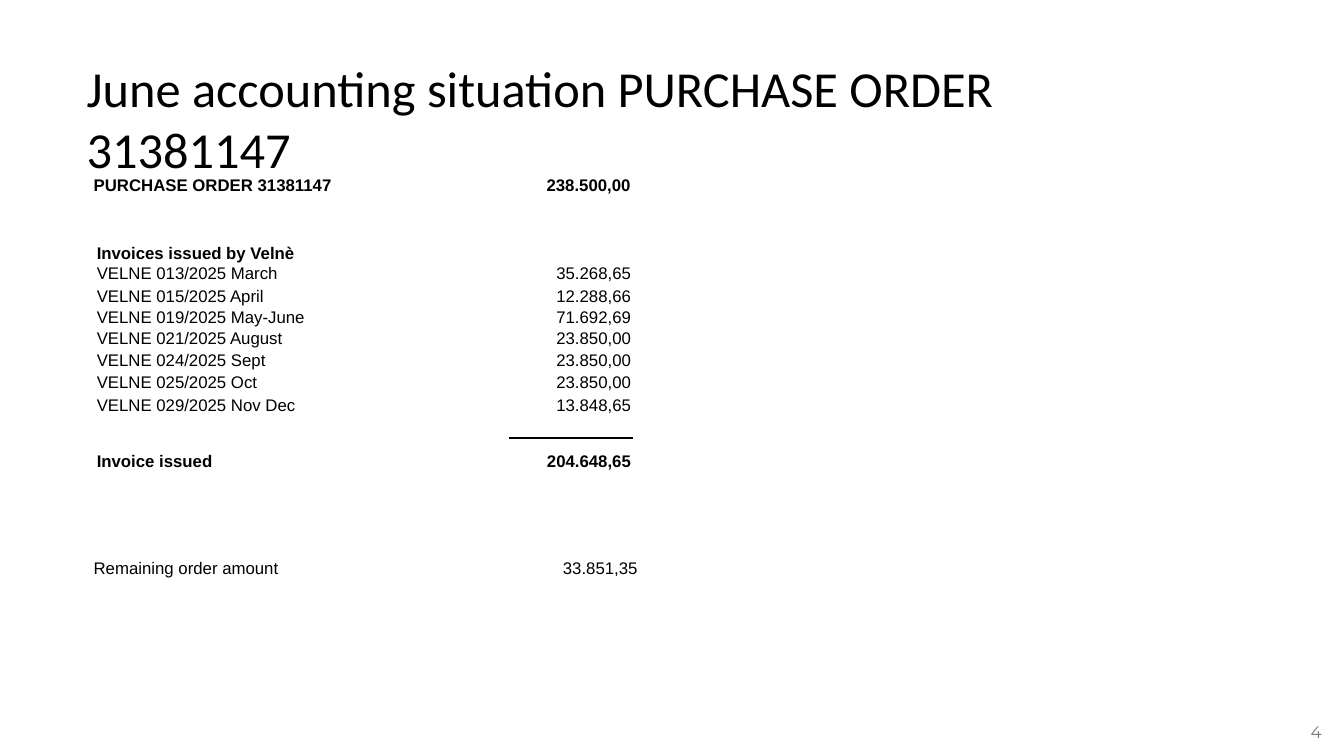
"""Build the June accounting slide for one purchase order."""
from dataclasses import dataclass
from typing import Optional

from lxml.etree import SubElement
from pptx import Presentation
from pptx.dml.color import RGBColor
from pptx.enum.text import MSO_ANCHOR as Anchor, MSO_AUTO_SIZE as AutoSize, PP_ALIGN as Align
from pptx.oxml.ns import qn
from pptx.util import Pt

BLACK = RGBColor(0x00, 0x00, 0x00)
WHITE = RGBColor(0xFF, 0xFF, 0xFF)
GREY = RGBColor(0x79, 0x79, 0x79)


@dataclass
class Row:
    height: float
    label: str = ""
    amount: str = ""
    bold: bool = False
    anchor: Anchor = Anchor.TOP
    rule_below: bool = False
    rule_above: bool = False


@dataclass
class Ledger:
    left: float
    top: float
    columns: list[float]
    rows: list[Row]
    fill: Optional[RGBColor] = None
    merged_rows: Optional[tuple[int, int]] = None


LEDGERS = [
    Ledger(66.2, 125.3, [203, 105, 77],
           [Row(15.8, "PURCHASE ORDER 31381147", "238.500,00", bold=True)], fill=WHITE),
    Ledger(66.2, 383, [191, 102, 97],
           [Row(30.2, "Remaining order amount", "33.851,35", anchor=Anchor.BOTTOM)]),
    Ledger(68.4, 157, [202.3, 93, 87.8], [
        Row(31, "Invoices issued by Velnè", bold=True, anchor=Anchor.BOTTOM),
        Row(16.5, "VELNE 013/2025 March", "35.268,65"),
        Row(15.1, "VELNE 015/2025 April", "12.288,66"),
        Row(15.1, "VELNE 019/2025 May-June", "71.692,69"),
        Row(15.8, "VELNE 021/2025 August", "23.850,00"),
        Row(15.8, "VELNE 024/2025 Sept", "23.850,00"),
        Row(15.8, "VELNE 025/2025 Oct", "23.850,00"),
        Row(15.8, "VELNE 029/2025 Nov Dec", "13.848,65"),
        Row(15.1, rule_below=True),
        Row(8.6, rule_above=True),
        Row(15.1, "Invoice issued", "204.648,65", bold=True, anchor=Anchor.BOTTOM),
    ], merged_rows=(3, 6)),
]


def write(frame, text: str, *, size: float = 12, font: str = "Arial", color: RGBColor = BLACK,
          bold: bool = False, align: Align = Align.LEFT) -> None:
    para = frame.paragraphs[0]
    para.alignment = align
    span = para.add_run()
    span.text = text
    span.font.size = Pt(size)
    span.font.name = font
    span.font.bold = bold
    span.font.color.rgb = color


def add_borders(cell, top: RGBColor, bottom: RGBColor) -> None:
    properties = cell._tc.get_or_add_tcPr()
    for side, color in (("L", WHITE), ("R", WHITE), ("T", top), ("B", bottom)):
        line = SubElement(properties, qn(f"a:ln{side}"), w=str(Pt(1)))
        SubElement(SubElement(line, qn("a:solidFill")), qn("a:srgbClr"), val=str(color))


def format_cell(cell, row: Row, text: str, align: Align, ruled: bool,
                fill: Optional[RGBColor]) -> None:
    cell.margin_left = cell.margin_right = cell.margin_top = Pt(0.72)
    cell.margin_bottom = Pt(0)
    cell.vertical_anchor = row.anchor
    add_borders(cell, BLACK if ruled and row.rule_above else WHITE,
                BLACK if ruled and row.rule_below else WHITE)
    if fill is None:
        cell.fill.background()
    else:
        cell.fill.solid()
        cell.fill.fore_color.rgb = fill
    if text:
        write(cell.text_frame, text, bold=row.bold, align=align)
    else:
        SubElement(cell.text_frame.paragraphs[0]._p, qn("a:endParaRPr"), sz="600")


def add_ledger(page, ledger: Ledger) -> None:
    rows = ledger.rows
    table = page.shapes.add_table(
        len(rows), len(ledger.columns), Pt(ledger.left), Pt(ledger.top),
        Pt(sum(ledger.columns)), Pt(sum(row.height for row in rows))).table
    table.first_row = table.horz_banding = False
    for column, width in zip(table.columns, ledger.columns):
        column.width = Pt(width)
    for index, row in enumerate(rows):
        table.rows[index].height = Pt(row.height)
        for place, text in enumerate((row.label, "", row.amount)):
            amount = place == 2
            format_cell(table.cell(index, place), row, text,
                        Align.RIGHT if amount else Align.LEFT, amount, ledger.fill)
    if ledger.merged_rows:
        first, last = ledger.merged_rows
        table.cell(first, 1).merge(table.cell(last, 1))


def add_title(page, text: str) -> None:
    title = page.shapes.title
    title.left, title.top, title.width, title.height = Pt(54.7), Pt(37.4), Pt(702.7), Pt(62.6)
    title.fill.solid()
    title.fill.fore_color.rgb = WHITE
    frame = title.text_frame
    frame.word_wrap = True
    frame.auto_size = AutoSize.NONE
    frame.vertical_anchor = Anchor.TOP
    write(frame, text, size=36, font="Calibri")


def add_page_number(page, text: str) -> None:
    box = page.shapes.add_textbox(Pt(735.1), Pt(508.3), Pt(216), Pt(28.8))
    box.text_frame.word_wrap = True
    box.text_frame.vertical_anchor = Anchor.MIDDLE
    write(box.text_frame, text, font="Montserrat", color=GREY, align=Align.RIGHT)


def main() -> None:
    deck = Presentation()
    deck.slide_width, deck.slide_height = Pt(960), Pt(540)
    page = deck.slides.add_slide(deck.slide_layouts[5])
    add_title(page, "June accounting situation PURCHASE ORDER 31381147")
    for ledger in LEDGERS:
        add_ledger(page, ledger)
    add_page_number(page, "4")
    deck.save("out.pptx")


if __name__ == "__main__":
    main()
